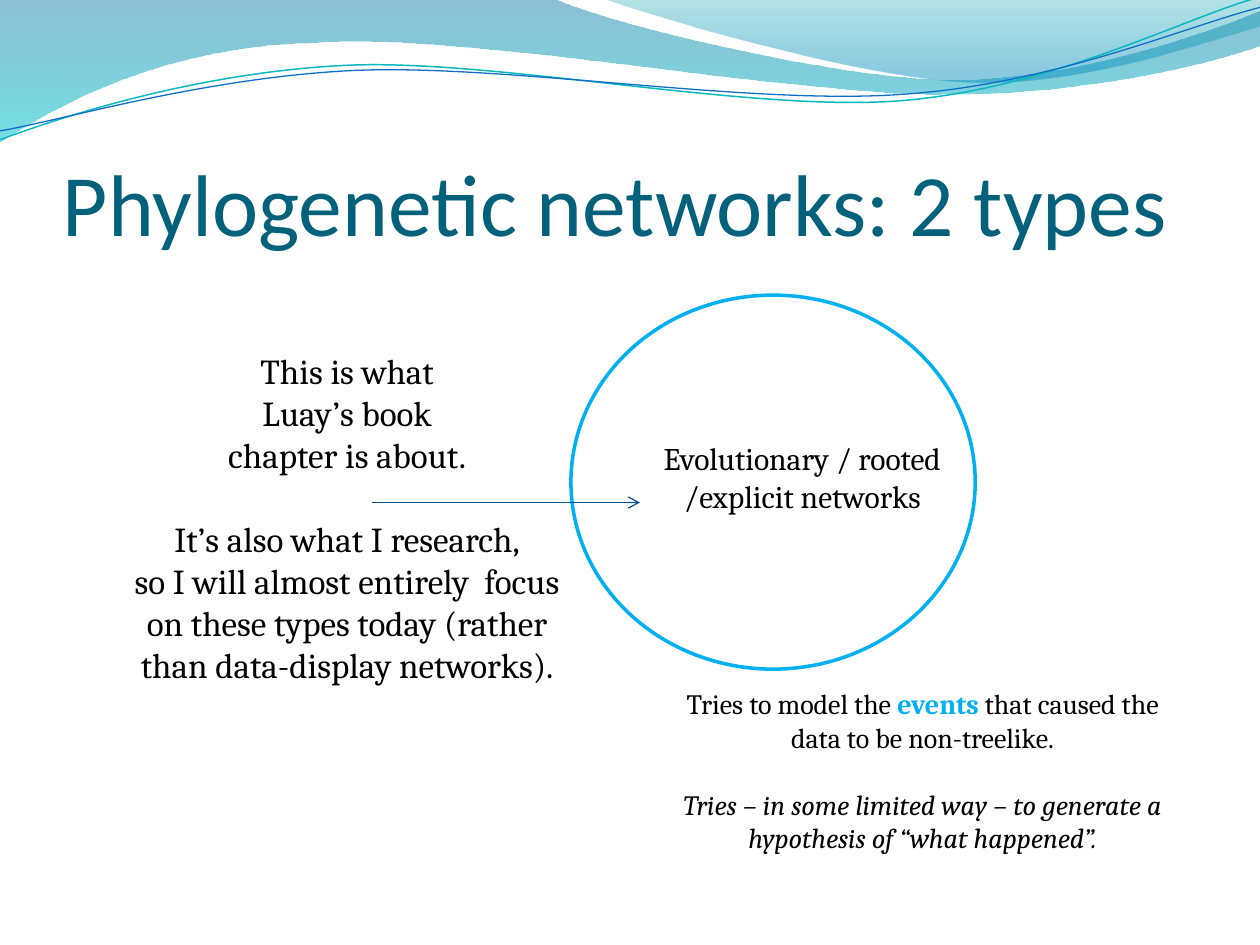
from lxml import etree
from pptx import Presentation
from pptx.dml.color import RGBColor
from pptx.enum.shapes import MSO_CONNECTOR, MSO_SHAPE
from pptx.enum.text import MSO_ANCHOR, PP_ALIGN
from pptx.oxml.ns import qn
from pptx.util import Cm, Pt

STRAIGHT, ELLIPSE = MSO_CONNECTOR.STRAIGHT, MSO_SHAPE.OVAL
TOP, BOTTOM = MSO_ANCHOR.TOP, MSO_ANCHOR.BOTTOM
LEFT, CENTER = PP_ALIGN.LEFT, PP_ALIGN.CENTER

THEME = {
    "title": "04617B", "text": "000000", "accent": "00B0F0", "arrow": "095295",
    "title_font": "Calibri", "body_font": "Cambria",
    "title_size": 50, "aside_size": 20, "label_size": 18, "note_size": 16,
}
INSETS = (0.25, 0.13, 0.25, 0.13)
STRAND_TILT = -2.7

# Outlines in cm: a start point, then one point per line or three per Bezier curve.
# Gradient stops run from top to bottom: position, colour, opacity in percent.
BANDS = [
    {"box": (-0.03, -0.03, 25.45, 2.9),
     "outline": [(0, 0), [(11.18, -0.02)],
                 [(12.09, 0.43), (16.87, 1.6), (19.25, 1.6)],
                 [(21.67, 1.6), (24.33, 0.66), (25.4, 0.23)],
                 [(25.43, 0.91)],
                 [(24.97, 1.12), (22.1, 1.93), (18.95, 1.9)],
                 [(15.8, 1.9), (9.7, 0.71), (6.53, 0.86)],
                 [(3.28, 0.91), (1.17, 2.11), (-0.03, 2.87)]],
     "stops": [(0, "0074A1", 45), (1, "00C6CF", 55)]},
    {"box": (12.17, -0.03, 13.23, 1.78),
     "outline": [(12.17, -0.02),
                 [(12.93, 0.28), (17.32, 1.57), (19.53, 1.65)],
                 [(21.74, 1.75), (24.41, 0.81), (25.4, 0.53)],
                 [(25.4, 0)]],
     "stops": [(0, "00A1A9", 30), (0.8, "008BBF", 45)]},
]
STRANDS = [
    {"box": (-0.05, 0.56, 25.45, 1.8),
     "outline": [(-0.05, 2.22),
                 [(1.19, 1.82), (4.02, 1.04), (7.05, 1.05)],
                 [(10.05, 1.07), (15.02, 2.37), (18.08, 2.29)],
                 [(21.13, 2.2), (23.86, 0.91), (25.41, 0.55)]],
     "color": "0AB8BF", "width": 0.85},
    {"box": (-0.05, 0.76, 25.48, 1.47),
     "outline": [(-0.04, 2.04),
                 [(1.16, 1.9), (4.17, 1.15), (7.2, 1.16)],
                 [(10.25, 1.18), (15.13, 2.25), (18.19, 2.16)],
                 [(21.22, 2.1), (23.93, 1.06), (25.45, 0.75)]],
     "color": "0F6FC6", "width": 0.75},
]

CIRCLE_BOX = (11.51, 5.95, 8.15, 7.54)
ARROW_ENDS = (7.5, 10.13, 12.9, 10.13)

# Each paragraph: its space before in points, then (text, font changes) runs.
TITLE = [(0, [("Phylogenetic networks: 2 types", {})])]
LABEL = [(0, [("Evolutionary / rooted /explicit networks", {})])]
NOTE = [
    (0, [("Tries to model the ", {}),
         ("events", {"bold": True, "color": "accent"}),
         (" that caused the data to be non-treelike.", {})]),
    (19, [("Tries – in some limited way – to generate a hypothesis of "
           "“what happened”.", {"italic": True})]),
]
ASIDE = [
    (0, [("This is what", {})]),
    (0, [("Luay’s book", {})]),
    (0, [("chapter is about.", {})]),
    (24, [("It’s also what I research,", {})]),
    (0, [("so I will almost entirely  focus", {})]),
    (0, [("on these types today (rather than data-display networks).", {})]),
]


def add_outline(slide, box, outline, close):
    """Add a freeform in the box, its three-point segments drawn as Bezier curves."""
    start, *segments = outline
    builder = slide.shapes.build_freeform(*map(Cm, start))
    builder.add_line_segments([tuple(map(Cm, segment[-1])) for segment in segments], close=close)
    shape = builder.convert_to_shape()
    shape.shadow.inherit = False
    left, top, width, height = map(Cm, box)
    frame = {"left": left, "top": top, "width": width, "height": height}
    for name, value in frame.items():
        setattr(shape, name, value)

    contour = next(shape._element.iter(qn("a:path")))
    contour.set("w", str(width))
    contour.set("h", str(height))
    for command, points in zip(list(contour), [[start], *segments]):
        if len(points) == 3:
            curve = etree.Element(qn("a:cubicBezTo"))
            contour.replace(command, curve)
            command = curve
        for point in list(command):
            command.remove(point)
        for x, y in points:
            etree.SubElement(command, qn("a:pt"), x=str(Cm(x) - left), y=str(Cm(y) - top))
    return shape


def set_line(shape, color, width):
    shape.line.color.rgb = RGBColor.from_string(color)
    shape.line.width = Pt(width)


def add_band(slide, box, outline, stops):
    shape = add_outline(slide, box, outline, True)
    shape.line.fill.background()
    shape.fill.gradient()
    shape.fill.gradient_angle = 270
    for stop, (position, color, _) in zip(shape.fill.gradient_stops, stops):
        stop.position = position
        stop.color.rgb = RGBColor.from_string(color)
    for color_element, (_, _, opacity) in zip(shape._element.spPr.iter(qn("a:srgbClr")), stops):
        etree.SubElement(color_element, qn("a:alpha"), val=str(opacity * 1000))


def add_strand(slide, box, outline, color, width):
    shape = add_outline(slide, box, outline, False)
    shape.rotation = STRAND_TILT
    shape.fill.background()
    set_line(shape, color, width)


def add_text(slide, box, paragraphs, role, font="body_font", color="text",
             align=CENTER, anchor=TOP, insets=INSETS):
    frame = slide.shapes.add_textbox(*map(Cm, box)).text_frame
    left, top, right, bottom = map(Cm, insets)
    frame_format = {"word_wrap": True, "vertical_anchor": anchor, "margin_left": left,
                    "margin_top": top, "margin_right": right, "margin_bottom": bottom}
    for name, value in frame_format.items():
        setattr(frame, name, value)
    for index, (space, runs) in enumerate(paragraphs):
        paragraph = frame.add_paragraph() if index else frame.paragraphs[0]
        paragraph.alignment = align
        paragraph.space_before = Pt(space)
        for text, changes in runs:
            run = paragraph.add_run()
            run.text = text
            run_format = {"name": THEME[font], "size": Pt(THEME[role + "_size"]),
                          "color": color, **changes}
            run.font.color.rgb = RGBColor.from_string(THEME[run_format.pop("color")])
            for name, value in run_format.items():
                setattr(run.font, name, value)


def add_circle(slide):
    circle = slide.shapes.add_shape(ELLIPSE, *map(Cm, CIRCLE_BOX))
    circle.shadow.inherit = False
    circle.fill.background()
    set_line(circle, THEME["accent"], 2)


def add_arrow(slide):
    arrow = slide.shapes.add_connector(STRAIGHT, *map(Cm, ARROW_ENDS))
    set_line(arrow, THEME["arrow"], 0.75)
    etree.SubElement(arrow.line._get_or_add_ln(), qn("a:tailEnd"), type="arrow")
    etree.SubElement(arrow._element.spPr, qn("a:effectLst"))


def main():
    presentation = Presentation()
    presentation.slide_width, presentation.slide_height = Cm(25.4), Cm(19.05)
    slide = presentation.slides.add_slide(presentation.slide_layouts[6])
    for band in BANDS:
        add_band(slide, **band)
    for strand in STRANDS:
        add_strand(slide, **strand)
    add_text(slide, (13.1, 8.72, 6.15, 2.57), LABEL, "label")
    add_circle(slide)
    add_text(slide, (13.1, 13.72, 11, 3.68), NOTE, "note")
    add_text(slide, (1.27, 1.95, 22.86, 3.18), TITLE, "title", font="title_font",
             color="title", align=LEFT, anchor=BOTTOM, insets=(0, 0.13, 0, 0))
    add_text(slide, (2.1, 6.92, 9.8, 8.81), ASIDE, "aside")
    add_arrow(slide)
    presentation.save("out.pptx")


if __name__ == "__main__":
    main()
